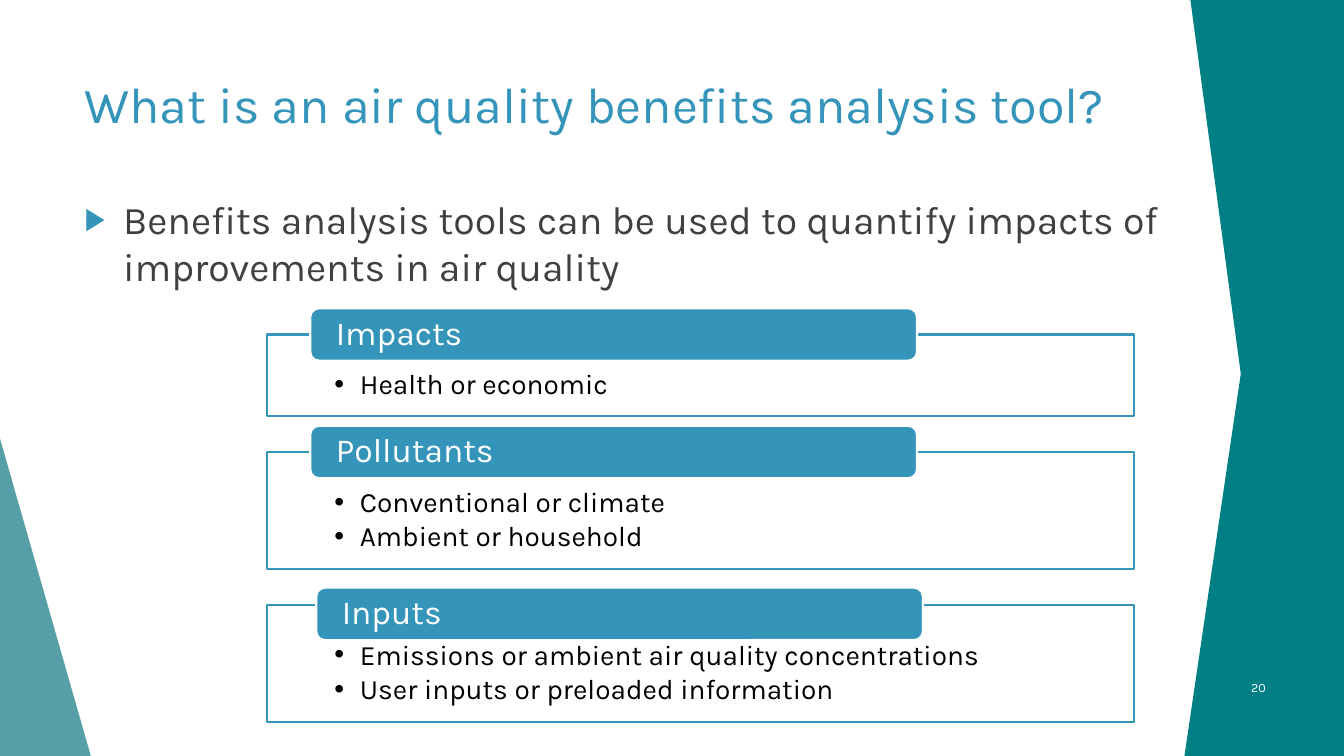
from lxml.etree import SubElement
from pptx import Presentation
from pptx.dml.color import RGBColor
from pptx.enum.shapes import MSO_SHAPE
from pptx.enum.text import MSO_ANCHOR, MSO_AUTO_SIZE, PP_ALIGN
from pptx.oxml.ns import qn
from pptx.util import Cm, Pt

TITLE = "What is an air quality benefits analysis tool?"
STATEMENT = "Benefits analysis tools can be used to quantify impacts of improvements in air quality"
PAGE_NUMBER = "20"
SECTIONS = [
    {"heading": "Impacts", "items": ["Health or economic"], "nudge": (0, 0)},
    {"heading": "Pollutants", "items": ["Conventional or climate", "Ambient or household"],
     "nudge": (0, 0)},
    {"heading": "Inputs", "items": ["Emissions or ambient air quality concentrations",
                                    "User inputs or preloaded information"],
     "nudge": (0.15, 0.23)},
]

FONT = "Karla"
BLUE, TEAL, PALE_TEAL = "3494BA", "008085", "3A8F98"
WHITE, BLACK, GREY = "FFFFFF", "000000", "404040"

PAGE_WIDTH, PAGE_HEIGHT = 33.87, 19.05
LEFT_WEDGE = [(0, 11.05), (2.29, PAGE_HEIGHT), (0, PAGE_HEIGHT)]
RIGHT_BAND = [(30, 0), (PAGE_WIDTH, 0), (PAGE_WIDTH, PAGE_HEIGHT),
              (29.85, PAGE_HEIGHT), (31.27, 9.42)]
FRAME_LEFT, FRAME_TOP, FRAME_WIDTH = 6.73, 8.43, 21.84
FRAME_PADDING, LINE_HEIGHT, FRAME_GAP = 1.17, 0.89, 0.9
TAB_LEFT, TAB_WIDTH, TAB_HEIGHT = 7.82, 15.29, 1.32


def colour(code):
    return RGBColor.from_string(code)


def paint(shape, fill, line=None, opacity=100):
    shape.shadow.inherit = False
    shape.fill.solid()
    shape.fill.fore_color.rgb = colour(fill)
    if opacity < 100:
        tint = shape.fill._xPr.find(qn("a:solidFill"))[0]
        SubElement(tint, qn("a:alpha"), val=str(opacity * 1000))
    if line:
        shape.line.color.rgb = colour(line)
        shape.line.width = Pt(1.5)
    else:
        shape.line.fill.background()


def add_bullet(para, symbol, indent, tint, percent):
    properties = para._p.get_or_add_pPr()
    properties.set("marL", str(Cm(indent)))
    properties.set("indent", str(-Cm(indent)))
    bullet_colour = SubElement(properties, qn("a:buClr"))
    SubElement(bullet_colour, qn("a:srgbClr"), val=tint)
    SubElement(properties, qn("a:buSzPct"), val=str(percent * 1000))
    SubElement(properties, qn("a:buFont"), typeface="Arial")
    SubElement(properties, qn("a:buChar"), char=symbol)


def write(box, text, size, tint, align=PP_ALIGN.LEFT, anchor=MSO_ANCHOR.TOP,
          insets=(0.25, 0.13, 0.25, 0.13), spacing=1.0, after=0, bullet=None):
    frame = box.text_frame
    frame.word_wrap = True
    frame.auto_size = MSO_AUTO_SIZE.NONE
    frame.vertical_anchor = anchor
    frame.margin_left, frame.margin_top, frame.margin_right, frame.margin_bottom = map(Cm, insets)
    lines = [text] if isinstance(text, str) else text
    for number, line in enumerate(lines):
        para = frame.add_paragraph() if number else frame.paragraphs[0]
        if bullet:
            add_bullet(para, *bullet)
        para.alignment = align
        para.line_spacing = spacing
        para.space_before = Pt(0)
        para.space_after = Pt(after)
        span = para.add_run()
        span.text = line
        span.font.name = FONT
        span.font.size = Pt(size)
        span.font.color.rgb = colour(tint)


def place(box, left, top, width, height):
    box.left, box.top, box.width, box.height = map(Cm, (left, top, width, height))


def add_outline(page, points, fill, opacity=100):
    corners = [(Cm(x), Cm(y)) for x, y in points]
    builder = page.shapes.build_freeform(*corners[0])
    builder.add_line_segments(corners[1:], close=True)
    paint(builder.convert_to_shape(), fill, opacity=opacity)


def add_section(page, section, top):
    height = FRAME_PADDING + LINE_HEIGHT * len(section["items"])
    frame = page.shapes.add_shape(MSO_SHAPE.RECTANGLE, Cm(FRAME_LEFT), Cm(top),
                                  Cm(FRAME_WIDTH), Cm(height))
    paint(frame, WHITE, line=BLUE, opacity=90)
    write(frame, section["items"], 20, BLACK, insets=(1.7, 0.91, 1.7, 0.41),
          spacing=0.9, after=3, bullet=("•", 0.64, BLACK, 100))
    shift_x, shift_y = section["nudge"]
    tab = page.shapes.add_shape(MSO_SHAPE.ROUNDED_RECTANGLE, Cm(TAB_LEFT + shift_x),
                                Cm(top - TAB_HEIGHT / 2 + shift_y), Cm(TAB_WIDTH), Cm(TAB_HEIGHT))
    paint(tab, BLUE, line=WHITE)
    write(tab, section["heading"], 24, WHITE, anchor=MSO_ANCHOR.MIDDLE,
          insets=(0.58, 0, 0.58, 0), spacing=0.9)
    return top + height + FRAME_GAP


def main():
    deck = Presentation()
    deck.slide_width, deck.slide_height = Cm(PAGE_WIDTH), Cm(PAGE_HEIGHT)
    page = deck.slides.add_slide(deck.slide_layouts[1])

    add_outline(page, LEFT_WEDGE, PALE_TEAL, opacity=85)
    add_outline(page, RIGHT_BAND, TEAL)

    title, body = page.shapes.title, page.placeholders[1]
    place(title, 1.88, 1.7, 30.28, 3.66)
    write(title, TITLE, 36, BLUE)
    place(body, 1.88, 4.78, 30.28, 2.46)
    write(body, STATEMENT, 28, GREY, bullet=("▶", 0.97, BLUE, 80))

    number = page.shapes.add_textbox(Cm(30.25), Cm(16.81), Cm(1.9), Cm(1.02))
    write(number, PAGE_NUMBER, 9, WHITE, align=PP_ALIGN.RIGHT, anchor=MSO_ANCHOR.MIDDLE)

    top = FRAME_TOP
    for section in SECTIONS:
        top = add_section(page, section, top)

    deck.save("out.pptx")


if __name__ == "__main__":
    main()
